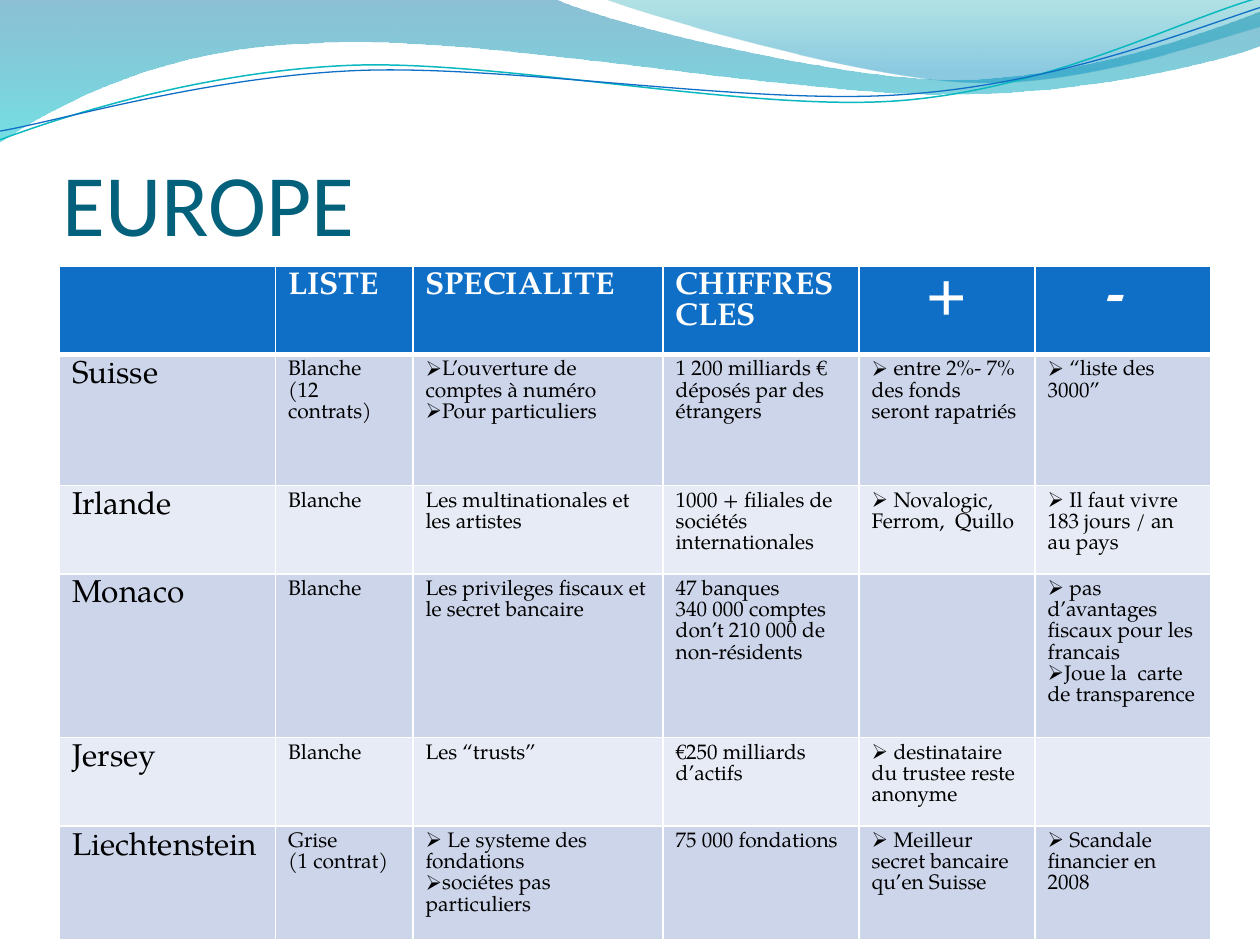
from lxml import etree
from pptx import Presentation
from pptx.dml.color import RGBColor
from pptx.enum.text import MSO_ANCHOR, PP_ALIGN
from pptx.oxml.ns import qn
from pptx.util import Pt

BOTTOM = MSO_ANCHOR.BOTTOM
CENTER = PP_ALIGN.CENTER
LEFT = PP_ALIGN.LEFT

TITLE_FONT = "Calibri"
TABLE_FONT = "TeX Gyre Pagella"
BULLET_FONT = "Wingdings"
BULLET_CHAR = "Ø"  # the Wingdings code of the arrowhead
BULLET = "➢"

# Each segment holds one point (straight) or three points (Bézier curve).
UPPER_WAVE = [
    [(0, 0)], [(316.8, -0.7)],
    [(342.7, 12.2), (478, 45.4), (545.8, 45.4)],
    [(614.2, 45.4), (689.8, 18.7), (720, 6.5)],
    [(720.7, 25.9)],
    [(707.8, 31.7), (626.4, 54.7), (537.1, 54)],
    [(447.8, 54), (275, 20.2), (185, 24.5)],
    [(92.9, 25.9), (33.1, 59.8), (-0.7, 81.4)],
]
RIGHT_WAVE = [
    [(344.9, -0.7)],
    [(366.5, 7.9), (491, 44.6), (553.7, 46.8)],
    [(616.3, 49.7), (691.9, 23), (720, 15.1)],
    [(720, 0)],
]
TEAL_LINE = [
    [(0, 79.9)],
    [(34.6, 67), (113.8, 41), (199.4, 37.4)],
    [(284.4, 33.8), (427, 64.1), (513.4, 57.6)],
    [(599.8, 51.1), (675.4, 10.8), (720, -1.4)],
]
BLUE_LINE = [
    [(0, 74.9)],
    [(33.8, 69.1), (118.1, 43.9), (203.8, 40.3)],
    [(290.2, 36.7), (429.8, 60.5), (516.2, 54)],
    [(601.9, 48.2), (673.9, 19.4), (720, 4.3)],
]

COLUMN_WIDTHS = [123.5, 78.5, 143, 112, 100.5, 100.5]
ROW_HEIGHTS = [50.5, 75, 48, 48, 48, 48]
HAVENS = [
    ["", "LISTE", "SPECIALITE", "CHIFFRES CLES", "+", "- "],
    ["Suisse", "Blanche\n(12 contrats)",
     "➢L’ouverture de comptes à numéro\n➢Pour particuliers",
     "1 200 milliards € déposés par des étrangers",
     "➢ entre 2%- 7% des fonds seront rapatriés", "➢ “liste des 3000”"],
    ["Irlande", "Blanche", "Les multinationales et les artistes",
     "1000 + filiales de sociétés internationales",
     "➢ Novalogic, Ferrom,  Quillo", "➢ Il faut vivre 183 jours / an au pays"],
    ["Monaco", "Blanche", "Les privileges fiscaux et le secret bancaire",
     "47 banques\n340 000 comptes  don’t 210 000 de non-résidents", "",
     "➢ pas d’avantages fiscaux pour les francais\n"
     "➢Joue la  carte de transparence"],
    ["Jersey", "Blanche", "Les “trusts”", "€250 milliards d’actifs",
     "➢ destinataire du trustee reste anonyme", ""],
    ["Liechtenstein", "Grise\n(1 contrat)",
     "➢ Le systeme des fondations\n➢sociétes pas particuliers",
     "75 000 fondations", "➢ Meilleur secret bancaire qu’en Suisse",
     "➢ Scandale financier en 2008"],
]


def rgb(value):
    return RGBColor.from_string(value)


def add_path(slide, segments, closed):
    """Add a freeform whose three-point segments are Bézier curves."""
    start, *rest = [(Pt(x), Pt(y)) for segment in segments for x, y in segment]
    builder = slide.shapes.build_freeform(*start)
    builder.add_line_segments(rest, close=closed)
    path = builder.convert_to_shape()
    path.shadow.inherit = False
    steps = path.element.iter(qn("a:lnTo"))
    lines = iter(list(steps))
    for segment in segments[1:]:
        group = [next(lines) for _ in segment]
        if len(group) == 3:
            curve = etree.Element(qn("a:cubicBezTo"))
            group[0].addprevious(curve)
            for line in group:
                curve.append(line[0])
                line.getparent().remove(line)
    return path


def add_wave(slide, segments, stops):
    """Add a vertical gradient wave; stops are (position, colour, opacity %)."""
    wave = add_path(slide, segments, True)
    wave.line.fill.background()
    wave.fill.gradient()
    wave.fill.gradient_angle = 270
    for stop, (position, color, _) in zip(wave.fill.gradient_stops, stops):
        stop.position = position
        stop.color.rgb = rgb(color)
    gradient = next(wave.element.iter(qn("a:gradFill")))
    for color, (_, _, opacity) in zip(gradient.iter(qn("a:srgbClr")), stops):
        etree.SubElement(color, qn("a:alpha"), val=str(opacity * 1000))


def add_curve(slide, segments, color, width):
    curve = add_path(slide, segments, False)
    curve.fill.background()
    curve.line.color.rgb = rgb(color)
    curve.line.width = Pt(width)


def write(paragraph, text, color, align=LEFT, **font):
    paragraph.alignment = align
    run = paragraph.add_run()
    run.text = text
    run.font.color.rgb = rgb(color)
    for name, value in font.items():
        setattr(run.font, name, value)


def add_title(slide, text):
    frame = slide.shapes.add_textbox(Pt(36), Pt(55.4), Pt(648), Pt(90)).text_frame
    layout = {"word_wrap": True, "vertical_anchor": BOTTOM, "margin_left": 0,
              "margin_top": Pt(3.6), "margin_right": 0, "margin_bottom": 0}
    for name, value in layout.items():
        setattr(frame, name, value)
    write(frame.paragraphs[0], text, "04617B", name=TITLE_FONT, size=Pt(50))


def set_bullet(paragraph):
    properties = paragraph._p.get_or_add_pPr()
    properties.set("marL", "0")
    properties.set("indent", "0")
    etree.SubElement(properties, qn("a:buFont"), typeface=BULLET_FONT,
                     pitchFamily="2", charset="2")
    etree.SubElement(properties, qn("a:buChar"), char=BULLET_CHAR)


def set_borders(cell, widths):
    properties = cell._tc.get_or_add_tcPr()
    for side, width in widths.items():
        line = etree.SubElement(properties, qn(f"a:ln{side}"), w=str(Pt(width)))
        fill = etree.SubElement(line, qn("a:solidFill"))
        etree.SubElement(fill, qn("a:srgbClr"), val="FFFFFF")


def fill_cell(cell, text, row, column):
    header = row == 0
    set_borders(cell, {"L": 1, "R": 1, "T": 3 if row == 1 else 1,
                       "B": 3 if header else 1})
    cell.fill.solid()
    cell.fill.fore_color.rgb = rgb(
        "0F6FC6" if header else "CCD5EA" if row % 2 else "E7EBF5")
    if not text:
        return
    sign = header and column > 3
    size = 32 if sign else 18 if header or column == 0 else 12
    frame = cell.text_frame
    for index, line in enumerate(text.split("\n")):
        paragraph = frame.add_paragraph() if index else frame.paragraphs[0]
        write(paragraph, line.removeprefix(BULLET),
              "FFFFFF" if header else "000000", CENTER if sign else LEFT,
              name=TABLE_FONT, size=Pt(size), bold=header)
        if line.startswith(BULLET):
            set_bullet(paragraph)


def add_haven_table(slide):
    table = slide.shapes.add_table(
        len(ROW_HEIGHTS), len(COLUMN_WIDTHS), Pt(34), Pt(152),
        Pt(sum(COLUMN_WIDTHS)), Pt(sum(ROW_HEIGHTS))).table
    for column, width in zip(table.columns, COLUMN_WIDTHS):
        column.width = Pt(width)
    for row, height in zip(table.rows, ROW_HEIGHTS):
        row.height = Pt(height)
    for row, texts in enumerate(HAVENS):
        for column, text in enumerate(texts):
            fill_cell(table.cell(row, column), text, row, column)


def main():
    deck = Presentation()
    deck.slide_width, deck.slide_height = Pt(720), Pt(540)
    slide = deck.slides.add_slide(deck.slide_layouts[6])
    add_wave(slide, UPPER_WAVE, [(0, "0074A1", 45), (1, "00C6CF", 55)])
    add_wave(slide, RIGHT_WAVE, [(0, "00A1A9", 30), (0.8, "008BBF", 45)])
    add_curve(slide, TEAL_LINE, "0AB8BF", 0.85)
    add_curve(slide, BLUE_LINE, "0F6FC6", 0.75)
    add_title(slide, "EUROPE")
    add_haven_table(slide)
    deck.save("out.pptx")


if __name__ == "__main__":
    main()
